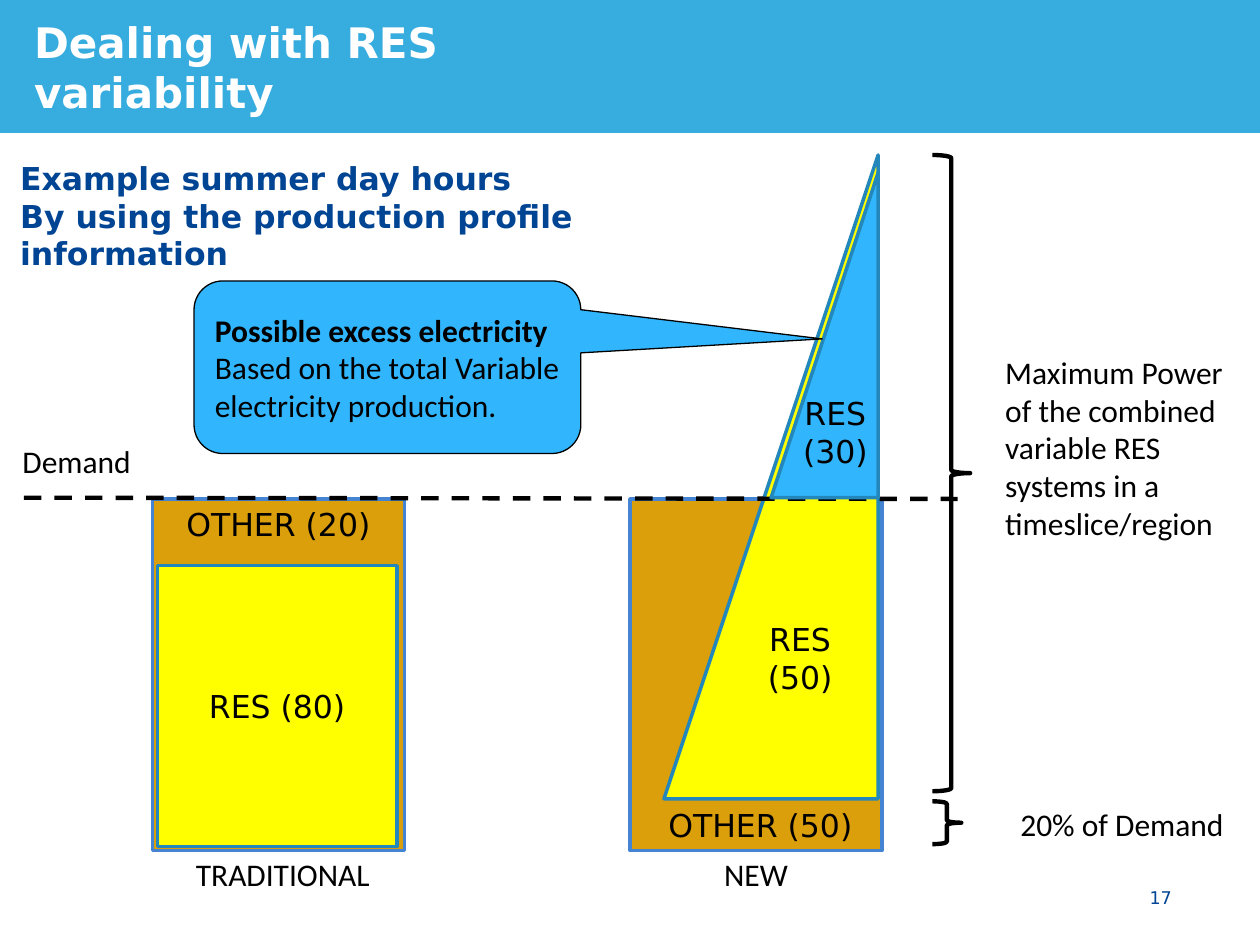
from lxml.etree import SubElement
from pptx import Presentation
from pptx.dml.color import RGBColor
from pptx.enum.dml import MSO_LINE as Dash
from pptx.enum.shapes import MSO_CONNECTOR as Wire, MSO_SHAPE as Kind
from pptx.enum.text import MSO_ANCHOR as Anchor, PP_ALIGN as Align
from pptx.oxml.ns import qn
from pptx.util import Inches, Pt

BAR = RGBColor(0x37, 0xAC, 0xDE)
NAVY = RGBColor(0x00, 0x44, 0x94)
GOLD = RGBColor(0xDC, 0x9F, 0x0C)
YELLOW = RGBColor(0xFF, 0xFF, 0x00)
SKY = RGBColor(0x31, 0xB6, 0xFD)
BLUE = RGBColor(0x45, 0x84, 0xD3)
EDGE = RGBColor(0x24, 0x87, 0xBB)
BLACK = RGBColor(0, 0, 0)
WHITE = RGBColor(255, 255, 255)
SANS, BODY = "DejaVu Sans", "Calibri"


def write(shape, lines, face=BODY, size=18, color=BLACK, bold=(False,),
          align=Align.LEFT, anchor=Anchor.TOP, inset=True):
    """Fill a shape with paragraphs; bold holds one flag, or one per line."""
    frame = shape.text_frame
    frame.text = "\n".join(lines)
    frame.word_wrap = True
    frame.vertical_anchor = anchor
    if not inset:
        frame.margin_left = frame.margin_right = 0
        frame.margin_top = frame.margin_bottom = 0
    for i, para in enumerate(frame.paragraphs):
        para.alignment = align
        font = para.font
        font.name, font.size, font.bold = face, Pt(size), bold[i % len(bold)]
        font.color.rgb = color


def label(slide, box, *lines, **style):
    """Add a wrapped text box."""
    write(slide.shapes.add_textbox(*map(Inches, box)), lines, **style)


def draw(slide, kind, box, fill, edge, width, flip=False):
    """Add a flat shape with a fill (or none) and an outline."""
    shape = slide.shapes.add_shape(kind, *map(Inches, box))
    shape.shadow.inherit = False
    if fill is None:
        shape.fill.background()
    else:
        shape.fill.solid()
        shape.fill.fore_color.rgb = fill
    shape.line.color.rgb = edge
    shape.line.width = Pt(width)
    if flip:
        shape.element.spPr.find(qn("a:xfrm")).set("flipH", "1")
    return shape


def header(slide, box):
    """Place the title on its coloured bar."""
    x, y, w, h = box
    title = slide.shapes.title
    bar = draw(slide, Kind.RECTANGLE, box, BAR, BAR, 0.75)
    title.element.addprevious(bar.element)
    title.left, title.top = Inches(x + 0.27), Inches(y + 0.13)
    title.width, title.height = Inches(3.79), Inches(0.81)
    write(title, ["Dealing with RES variability"], SANS, 24, WHITE, [True],
          inset=False)


def old_mix(slide, box):
    """Draw the traditional column with its constant RES share."""
    x, y, w, h = box
    style = dict(face=SANS, align=Align.CENTER)
    other = draw(slide, Kind.RECTANGLE, box, GOLD, BLUE, 2)
    write(other, ["OTHER (20)"], **style)
    res = draw(slide, Kind.RECTANGLE, (x + 0.04, y + 0.53, w - 0.1, h - 0.56),
               YELLOW, EDGE, 2)
    write(res, ["RES (80)"], anchor=Anchor.MIDDLE, **style)
    label(slide, (x - 0.38, y + h - 0.01, 2.83, 0.4), "TRADITIONAL",
          align=Align.CENTER)


def new_mix(slide, box):
    """Draw the new column with its variable RES triangle."""
    x, y, w, h = box
    draw(slide, Kind.RECTANGLE, box, GOLD, BLUE, 2)
    draw(slide, Kind.RIGHT_TRIANGLE, (x + 0.27, y - 2.73, 1.7, 5.11),
         YELLOW, EDGE, 2, True)
    label(slide, (x - 0.25, y + h - 0.01, 2.5, 0.4), "NEW",
          align=Align.CENTER)


def excess(slide, box):
    """Draw the RES peak above demand and the labels of the new column."""
    x, y, w, h = box
    draw(slide, Kind.RIGHT_TRIANGLE, box, SKY, EDGE, 2, True)
    for dx, dy, wide, high, words in ((-0.04, 1.71, 1.1, 0.71, "RES (30)"),
                                      (-0.32, 3.5, 1.1, 0.71, "RES (50)"),
                                      (-1.01, 4.98, 1.85, 0.4, "OTHER (50)")):
        label(slide, (x + dx, y + dy, wide, high), words, face=SANS,
              align=Align.CENTER)


def demand(slide, box):
    """Draw the dashed demand line with its label above."""
    x, y, w, h = box
    line = slide.shapes.add_connector(
        Wire.STRAIGHT, *map(Inches, (x, y, x + w, y + h)))
    line.line.color.rgb = BLACK
    line.line.width = Pt(2.5)
    line.line.dash_style = Dash.DASH
    SubElement(line.element.spPr, qn("a:effectLst"))
    label(slide, (x - 0.11, y - 0.49, 2.29, 0.4), "Demand")


def braces(slide, box):
    """Draw the two braces and their notes."""
    x, y, w, h = box
    for dy, wide, high in ((0, 0.3, 5.05), (5.13, 0.23, 0.34)):
        draw(slide, Kind.RIGHT_BRACE, (x, y + dy, wide, high),
             None, BLACK, 2.5)
    label(slide, (x + 0.48, y + 1.52, 2, 1.62), "Maximum Power of the combined "
          "variable RES systems in a timeslice/region")
    label(slide, (x + 0.6, y + 5.11, 1.83, 0.4), "20% of Demand")


def callout(slide, box):
    """Draw the callout that points at the excess."""
    shape = draw(slide, Kind.ROUNDED_RECTANGULAR_CALLOUT, box, SKY, BLACK, 0.75)
    for i, value in enumerate((1.124, -0.164, 0.167)):
        shape.adjustments[i] = value
    write(shape, ["Possible excess electricity",
                  "Based on the total Variable electricity production."],
          bold=(True, False), anchor=Anchor.MIDDLE)


def main():
    """Build and save the slide."""
    deck = Presentation()
    deck.slide_width, deck.slide_height = Inches(10), Inches(7.5)
    slide = deck.slides.add_slide(deck.slide_layouts[5])
    header(slide, (0, 0, 10, 1.05))
    new_mix(slide, (5, 3.96, 2, 2.79))
    old_mix(slide, (1.21, 3.96, 2, 2.79))
    braces(slide, (7.4, 1.23, 2.48, 5.51))
    demand(slide, (0.19, 3.95, 7.41, 0.01))
    excess(slide, (6.12, 1.37, 0.85, 2.58))
    callout(slide, (1.54, 2.23, 3.07, 1.37))
    label(slide, (0.16, 1.26, 4.6, 0.91), "Example summer day hours",
          "By using the production profile information", face=SANS,
          color=NAVY, bold=(True,), inset=False)
    label(slide, (6.97, 7.04, 2.33, 0.16), "17", face=SANS, size=10,
          color=NAVY, align=Align.RIGHT, inset=False)
    deck.save("out.pptx")


if __name__ == "__main__":
    main()
